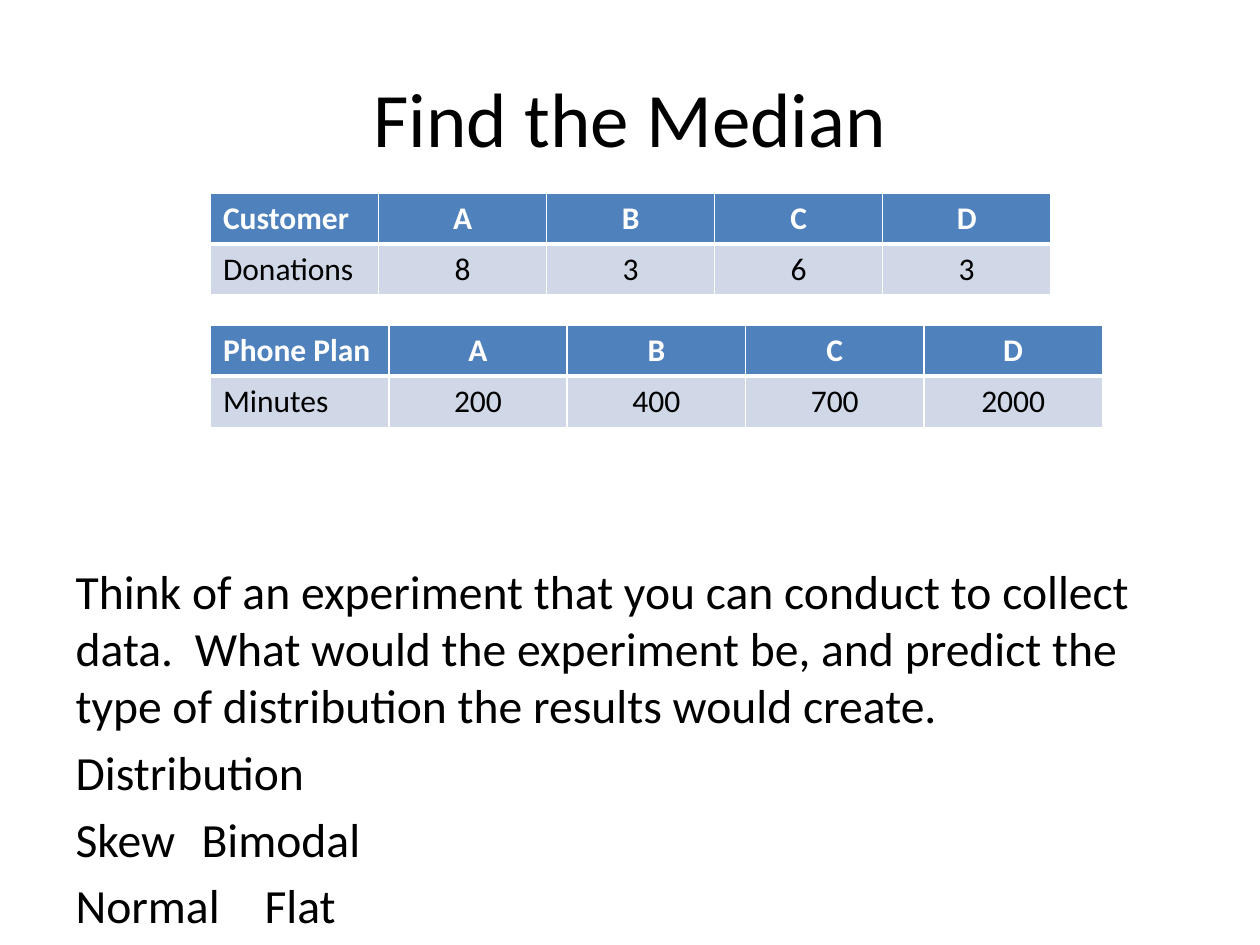
import dataclasses

import lxml.etree
import pptx
import pptx.dml.color
import pptx.enum.text
import pptx.oxml.ns
import pptx.util

Inches = pptx.util.Inches
Pt = pptx.util.Pt
qn = pptx.oxml.ns.qn
ALIGN = pptx.enum.text.PP_ALIGN
ANCHOR = pptx.enum.text.MSO_ANCHOR


@dataclasses.dataclass(frozen=True)
class Theme:
    font: str = "Calibri"
    text: str = "000000"
    light: str = "FFFFFF"
    header: str = "4F81BD"
    band: str = "D0D8E8"
    title_pt: float = 44
    body_pt: float = 27.2
    table_pt: float = 18


THEME = Theme()


def rgb(color):
    return pptx.dml.color.RGBColor.from_string(color)


def add_run(p, text, size, color, bold=False):
    r = p.add_run()
    r.text = text
    r.font.name = THEME.font
    r.font.size = Pt(size)
    r.font.bold = bold
    r.font.color.rgb = rgb(color)


def place(sp, box):
    sp.left, sp.top, sp.width, sp.height = (Inches(v) for v in box)


def fill_title(sp, box, text):
    place(sp, box)
    tf = sp.text_frame
    tf.vertical_anchor = ANCHOR.MIDDLE
    p = tf.paragraphs[0]
    p.alignment = ALIGN.CENTER
    add_run(p, text, THEME.title_pt, THEME.text)


def fill_body(sp, box, lines, text_offset, tab):
    """Unbulleted text starting text_offset below the top of the box."""
    place(sp, box)
    tf = sp.text_frame
    tf.word_wrap = True
    tf.auto_size = pptx.enum.text.MSO_AUTO_SIZE.NONE
    tf.vertical_anchor = ANCHOR.TOP
    tf.margin_top = Inches(text_offset)
    for i, line in enumerate(lines):
        p = tf.add_paragraph() if i else tf.paragraphs[0]
        p.space_before = Pt(5.4 if i else 0)
        pPr = p._p.get_or_add_pPr()
        pPr.set("marL", "0")
        pPr.set("indent", "0")
        lxml.etree.SubElement(pPr, qn("a:buNone"))
        # Second column of the distribution list
        if "\t" in line:
            tabs = lxml.etree.SubElement(pPr, qn("a:tabLst"))
            lxml.etree.SubElement(tabs, qn("a:tab"), pos=str(Inches(tab)), algn="l")
        add_run(p, line, THEME.body_pt, THEME.text)


def set_borders(cell, **widths):
    tcPr = cell._tc.get_or_add_tcPr()
    for side in "LRTB":
        ln = lxml.etree.SubElement(tcPr, qn("a:ln" + side), w=str(Pt(widths.get(side, 1))))
        fill = lxml.etree.SubElement(ln, qn("a:solidFill"))
        lxml.etree.SubElement(fill, qn("a:srgbClr"), val=THEME.light)


def add_data_table(s, box, rows):
    left, top, width, height = (Inches(v) for v in box)
    n = len(rows[0])
    table = s.shapes.add_table(len(rows), n, left, top, width, height).table
    for col in table.columns:
        col.width = int(width / n)
    for i, row in enumerate(rows):
        head = i == 0
        for j, value in enumerate(row):
            cell = table.cell(i, j)
            # Thick rule between header and data
            set_borders(cell, **({"B": 3} if head else {"T": 3}))
            cell.fill.solid()
            cell.fill.fore_color.rgb = rgb(THEME.header if head else THEME.band)
            p = cell.text_frame.paragraphs[0]
            p.alignment = ALIGN.CENTER if j else ALIGN.LEFT
            add_run(p, value, THEME.table_pt, THEME.light if head else THEME.text, head)


def main():
    prs = pptx.Presentation()
    prs.slide_width, prs.slide_height = Inches(10), Inches(7.5)
    s = prs.slides.add_slide(prs.slide_layouts[1])

    # Title and question
    fill_title(s.shapes.title, (0.5, 0.3, 9, 1.25), "Find the Median")
    fill_body(s.placeholders[1], (0.5, 1.75, 9, 5.33), [
        "Think of an experiment that you can conduct to collect data.  What would "
        "the experiment be, and predict the type of distribution the results would create.",
        "Distribution",
        "Skew\tBimodal",
        "Normal\tFlat",
    ], text_offset=2.71, tab=3.18)

    # Data sets
    add_data_table(s, (1.67, 1.53, 6.67, 0.81), [
        ["Customer", "A", "B", "C", "D"],
        ["Donations", "8", "3", "6", "3"],
    ])
    add_data_table(s, (1.67, 2.58, 7.08, 0.8), [
        ["Phone Plan", "A", "B", "C", "D"],
        ["Minutes", "200", "400", "700", "2000"],
    ])
    prs.save("out.pptx")


if __name__ == "__main__":
    main()
